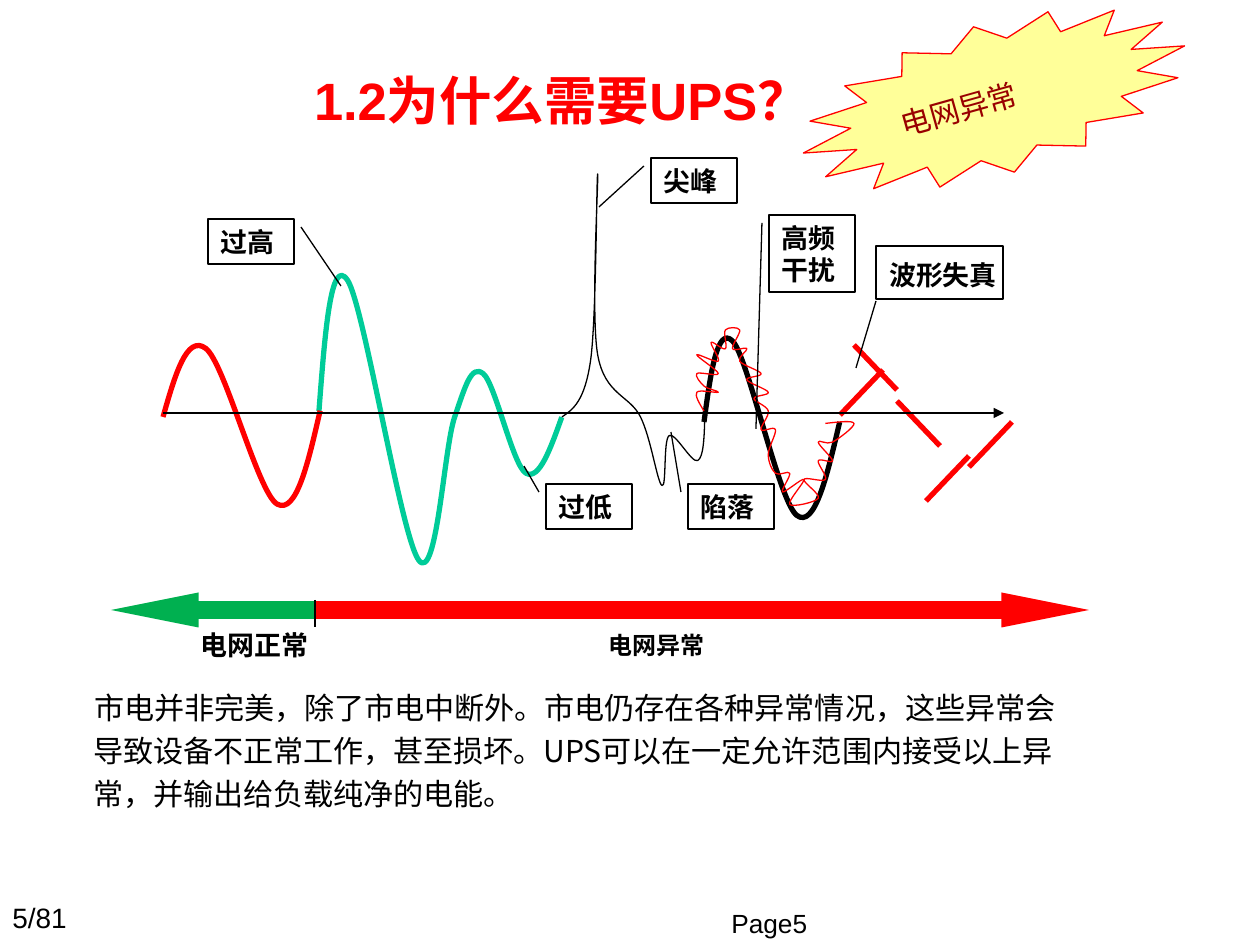
from pptx import Presentation
from pptx.dml.color import RGBColor
from pptx.enum.shapes import MSO_CONNECTOR, MSO_SHAPE
from pptx.enum.text import MSO_ANCHOR as ANCHOR, PP_ALIGN as ALIGN
from pptx.oxml.ns import qn
from pptx.util import Pt
from lxml.etree import SubElement

PX = 914400 / 126
BLACK, WHITE, RED, GREEN, TEAL = "000000", "FFFFFF", "FF0000", "00B050", "00CC99"
YELLOW, MAROON = "FFFF99", "990000"
THIN, MEDIUM, THICK, BAR = 0.75, 1, 3, 10


def px(*values):
    return [round(v * PX) for v in values]


def style(sp, fill=None, line=None, width=THIN, text=None, size=15.4, font="Arial",
          color=BLACK, bold=True, align=ALIGN.LEFT, anchor=ANCHOR.TOP, wrap=True,
          margins=None):
    if fill:
        sp.fill.solid()
        sp.fill.fore_color.rgb = RGBColor.from_string(fill)
    elif hasattr(sp, "fill"):
        sp.fill.background()
    if line:
        sp.line.color.rgb = RGBColor.from_string(line)
        sp.line.width = Pt(width)
    if hasattr(sp, "shadow"):
        sp.shadow.inherit = False
    else:
        SubElement(sp._element.spPr, qn("a:effectLst"))
    if text:
        tf = sp.text_frame
        tf.word_wrap = wrap
        tf.vertical_anchor = anchor
        if margins:
            tf.margin_left, tf.margin_top = px(*margins)
            tf.margin_right, tf.margin_bottom = px(*margins)
        p = tf.paragraphs[0]
        p.text = text
        p.alignment = align
        r = p.runs[0]
        r.font.size = Pt(size)
        r.font.bold = bold
        r.font.name = font
        r.font.color.rgb = RGBColor.from_string(color)
        SubElement(r._r.rPr, qn("a:ea"), typeface="Noto Sans CJK SC")
    return sp


prs = Presentation()
prs.slide_width, prs.slide_height = px(1260, 945)
s = prs.slides.add_slide(prs.slide_layouts[6])
shapes = s.shapes

GRID_X, GRID_Y = 7.14, 6.23
normal = [(0, 0), (6, -11), (16, 14), (22, -1)]
swell_and_sag = [(0, 0), (4, -21), (14, 24), (19, 1), (23, -6), (29, 10), (34, 1)]
spike_and_dip = [(0, 0), (4, -9), (5, -39), (5, -10), (11, 0), (14, 11), (15, 3),
                 (19, 7), (20, 0)]
carrier = [(0, 0), (4, -13), (13, 15), (19, 0)]
noise_rise = [(0, 0), (-1, -3), (2, -3), (0, -4), (-1, -6), (2, -6), (-1, -9), (2, -8),
              (1, -11), (3, -10), (3, -13)]
noise_fall = [(5, -13), (4, -10), (6, -10), (5, -8), (8, -6), (6, -5), (9, -3), (7, -2),
              (9, 0), (8, 3), (10, 3), (9, 7), (10, 10), (12, 10), (11, 13)]
noise_return = [(14, 11), (12, 15), (16, 14), (14, 11), (17, 11), (16, 8), (18, 8),
                (16, 5), (18, 5), (21, 2), (17, 2)]

for left, top, turns, color, width in [
        (319, 411, swell_and_sag, TEAL, THICK),
        (704, 422, carrier, BLACK, THICK),
        (704, 411, noise_rise + noise_fall + noise_return, RED, THIN),
        (562, 417, spike_and_dip, BLACK, THIN),
        (163, 417, normal, RED, THICK)]:
    knots = [(left + col * GRID_X, top + row * GRID_Y) for col, row in turns]
    tangents = [((x2 - x0) / 6, (y2 - y0) / 6)
                for (x0, y0), (x2, y2) in zip(knots, knots[2:])]
    arrive = [(x - dx, y - dy) for (x, y), (dx, dy) in zip(knots[1:], tangents)]
    leave = [(x + dx, y + dy) for (x, y), (dx, dy) in zip(knots[1:], tangents)]
    first, last = [((x + cx) / 2, (y + cy) / 2) for (x, y), (cx, cy) in
                   [(knots[0], arrive[0]), (knots[-1], leave[-1])]]
    curves = list(zip([first] + leave, arrive + [last], knots[1:]))

    fb = shapes.build_freeform(*px(*knots[0]))
    fb.add_line_segments([px(*point) for curve in curves for point in curve], close=False)
    sp = style(fb.convert_to_shape(), line=color, width=width)
    path = sp._element.find(".//" + qn("a:path"))
    segments = path.findall(qn("a:lnTo"))
    for i in range(0, len(segments), 3):
        bezier = SubElement(path, qn("a:cubicBezTo"))
        for segment in segments[i:i + 3]:
            bezier.append(segment[0])
            path.remove(segment)

LABEL_W, LEADER_GAP, LEADER_DROP = 86, 7, 8
for text, left, top, height, fill, tip_x, tip_y in [
        ("过高", 208, 219, 45, None, 341, 286),
        ("过低", 546, 484, 45, None, 524, 466),
        ("尖峰", 651, 158, 45, WHITE, 599, 207),
        ("陷落", 688, 484, 45, WHITE, 671, 432),
        ("高频干扰", 769, 215, 77, None, 756, 429)]:
    leader_x = -LEADER_GAP if tip_x < left else LABEL_W + LEADER_GAP
    sp = shapes.add_shape(MSO_SHAPE.LINE_CALLOUT_1, *px(left, top, LABEL_W, height))
    leader = [LEADER_DROP / height, leader_x / LABEL_W,
              (tip_y - top) / height, (tip_x - left) / LABEL_W]
    for i, ratio in enumerate(leader):
        sp.adjustments[i] = ratio
    style(sp, fill, BLACK, text=text)

style(shapes.add_shape(MSO_SHAPE.RECTANGLE, *px(876, 246, 127, 53)), line=BLACK)

DASH_W, DASH_H = 43, 45
dashes = [(x, y, x + DASH_W, y + slope * DASH_H, RED, THICK, None)
          for x, y, slope in [(840, 415, -1), (854, 345, 1), (897, 401, 1),
                              (926, 501, -1), (969, 467, -1)]]
AXIS_Y, BAR_Y, BAR_SPLIT = 413, 610, 315
lines = dashes + [
    (856, 368, 876, 301, BLACK, THIN, None),
    (163, AXIS_Y, 1004, AXIS_Y, BLACK, MEDIUM, "tailEnd"),
    (111, BAR_Y, BAR_SPLIT, BAR_Y, GREEN, BAR, "headEnd"),
    (BAR_SPLIT, BAR_Y, 1089, BAR_Y, RED, BAR, "tailEnd"),
    (BAR_SPLIT, 600, BAR_SPLIT, 627, BLACK, MEDIUM, None)]
for x1, y1, x2, y2, color, width, arrow in lines:
    sp = shapes.add_connector(MSO_CONNECTOR.STRAIGHT, *px(x1, y1, x2, y2))
    style(sp, line=color, width=width)
    if arrow:
        head = SubElement(sp.line._get_or_add_ln(), qn("a:" + arrow), type="triangle")
        if width == BAR:
            head.set("w", "sm")
            head.set("len", "lg")

sp = shapes.add_shape(MSO_SHAPE.STAR_16_POINT, *px(796, 24, 396, 151))
sp.rotation = 344.3
style(sp, YELLOW, RED, text="电网异常", size=17.1, color=MAROON, bold=False,
      anchor=ANCHOR.MIDDLE, margins=(9, 5))

middle = dict(align=ALIGN.CENTER, anchor=ANCHOR.MIDDLE)
caption = dict(font="Roboto", wrap=False)
for text, box, options in [
        ("波形失真", (876, 252, 134, 45), dict(wrap=False, **middle)),
        ("1.2为什么需要UPS？", (90, 56, 944, 87), dict(size=30, color=RED, **middle)),
        ("电网正常", (188, 622, 134, 45), caption),
        ("电网异常", (596, 624, 122, 42), dict(size=13.7, **caption)),
        ("5/81", (0, 894, 112, 47), dict(size=16, bold=False, wrap=False)),
        ("Page5", (719, 901, 179, 39), dict(size=15, bold=False))]:
    style(shapes.add_textbox(*px(*box)), text=text, **options)

body = ("市电并非完美，除了市电中断外。市电仍存在各种异常情况，这些异常会导致设备不正常工作，"
        "甚至损坏。UPS可以在一定允许范围内接受以上异常，并输出给负载纯净的电能。")
sp = style(shapes.add_textbox(*px(35, 677, 1055, 195)), text=body, size=17.2,
           font="Noto Sans CJK SC", bold=False, margins=(11, 5))
p = sp.text_frame.paragraphs[0]
p.line_spacing = 1.2
pPr = p._p.get_or_add_pPr()
for name, value in zip(("marL", "indent"), px(47, 1)):
    pPr.set(name, str(value))

prs.save("out.pptx")
